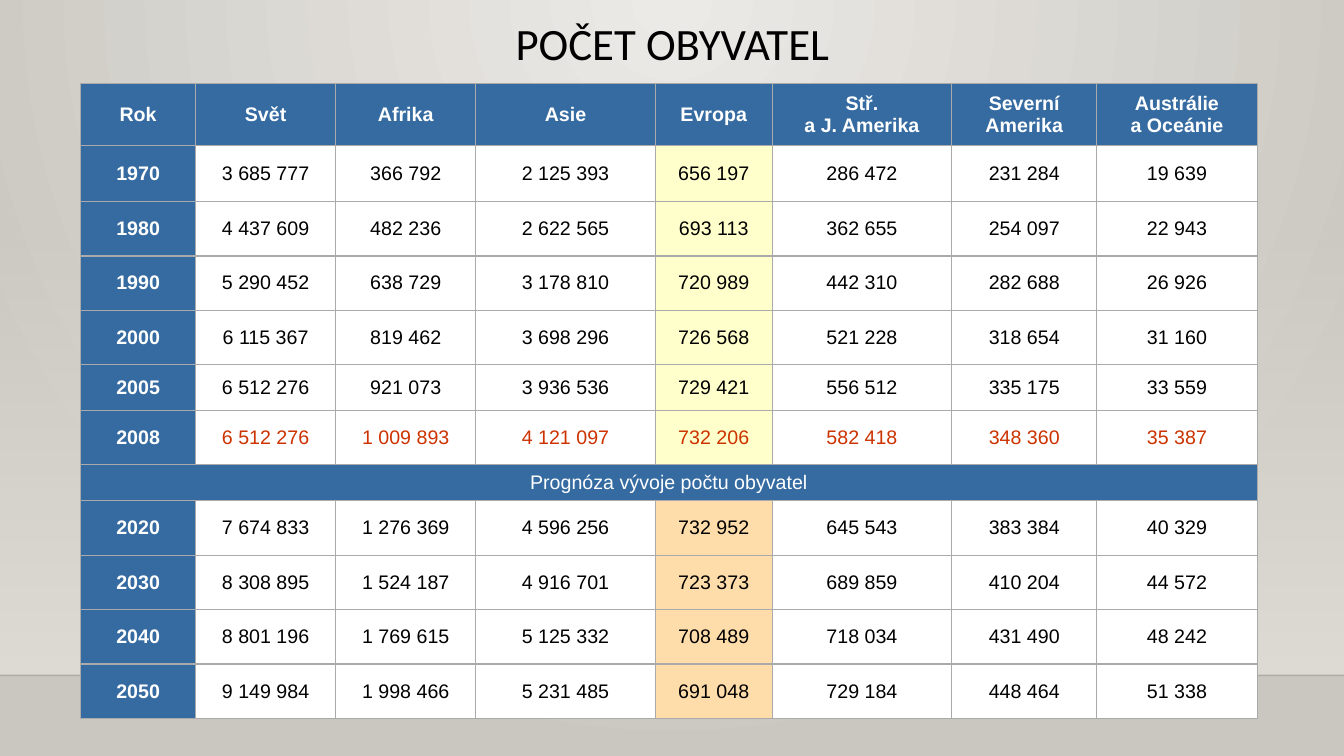
from lxml import etree
from pptx import Presentation, util as u
from pptx.dml.color import RGBColor
from pptx.enum import shapes, text
from pptx.oxml import ns

# Content
TITLE = "POČET OBYVATEL"
HEADINGS = ["Rok", "Svět", "Afrika", "Asie", "Evropa", "Stř.\na J. Amerika",
            "Severní\nAmerika", "Austrálie\na Oceánie"]
HISTORY = [
    (1970, 3685777, 366792, 2125393, 656197, 286472, 231284, 19639),
    (1980, 4437609, 482236, 2622565, 693113, 362655, 254097, 22943),
    (1990, 5290452, 638729, 3178810, 720989, 442310, 282688, 26926),
    (2000, 6115367, 819462, 3698296, 726568, 521228, 318654, 31160),
    (2005, 6512276, 921073, 3936536, 729421, 556512, 335175, 33559),
    (2008, 6512276, 1009893, 4121097, 732206, 582418, 348360, 35387),
]
FORECAST_HEADING = "Prognóza vývoje počtu obyvatel"
FORECAST = [
    (2020, 7674833, 1276369, 4596256, 732952, 645543, 383384, 40329),
    (2030, 8308895, 1524187, 4916701, 723373, 689859, 410204, 44572),
    (2040, 8801196, 1769615, 5125332, 708489, 718034, 431490, 48242),
    (2050, 9149984, 1998466, 5231485, 691048, 729184, 448464, 51338),
]
HIGHLIGHT_YEAR = 2008
EUROPE = HEADINGS.index("Evropa")

COLORS = {"blue": "356BA1", "white": "FFFFFF", "black": "000000", "red": "CC3300",
          "yellow": "FFFFCC", "orange": "FFDDAB", "border": "AAAAAA",
          "glow": "ECEAE7", "wall": "CAC7C1", "haze": "DFDBD5"}

# Layout in inches
WIDTH, HEIGHT = 13.33, 7.5
FLOOR = 6.7
HAZE_TOP = 2.21
TABLE_LEFT, TABLE_TOP = 0.8, 0.83
COLUMNS = [1.14, 1.39, 1.39, 1.78, 1.16, 1.78, 1.44, 1.59]
ROW, SPECIAL_ROWS = 0.54, {0: 0.61, 1: 0.56, 5: 0.45, 7: 0.36}


def rgb(name):
    return RGBColor.from_string(COLORS[name])


def add_node(parent, tag, **attributes):
    node = etree.SubElement(parent, ns.qn(tag))
    for key, value in attributes.items():
        node.set(key, str(value))
    return node


def set_gradient(fill, first, last):
    fill.gradient()
    for stop, name, position in zip(fill.gradient_stops, (first, last), (0, 1)):
        stop.color.rgb = rgb(name)
        stop.position = position


def style_text(frame, font_name, size, color, bold=False):
    for paragraph in frame.paragraphs:
        paragraph.alignment = text.PP_ALIGN.CENTER
        for run in paragraph.runs:
            run.font.name = font_name
            run.font.size = u.Pt(size)
            run.font.bold = bold
            run.font.color.rgb = rgb(color)


def fill_cell(cell, words, fill, color, bold=False):
    cell.text_frame.text = words
    style_text(cell.text_frame, "Arial", 14, color, bold)
    cell.vertical_anchor = text.MSO_ANCHOR.MIDDLE
    properties = cell._tc.get_or_add_tcPr()
    for side in ("a:lnL", "a:lnR", "a:lnT", "a:lnB"):
        border = add_node(properties, side, w=u.Pt(1))
        add_node(add_node(border, "a:solidFill"), "a:srgbClr", val=COLORS["border"])
    cell.fill.solid()
    cell.fill.fore_color.rgb = rgb(fill)


def add_background(slide):
    # Round glow from the top centre
    set_gradient(slide.background.fill, "glow", "wall")
    gradient = next(slide._element.iter(ns.qn("a:gradFill")))
    gradient.remove(gradient.find(ns.qn("a:lin")))
    glow = add_node(gradient, "a:path", path="circle")
    add_node(glow, "a:fillToRect", l=43000, t=0, r=43000, b=100000)

    # Haze that fades in down to the floor
    haze = slide.shapes.add_shape(shapes.MSO_SHAPE.RECTANGLE, 0, u.Inches(HAZE_TOP),
                                  u.Inches(WIDTH), u.Inches(FLOOR - HAZE_TOP))
    haze.shadow.inherit = False
    haze.line.fill.background()
    set_gradient(haze.fill, "haze", "haze")
    haze.fill.gradient_angle = 270
    add_node(next(haze._element.iter(ns.qn("a:srgbClr"))), "a:alpha", val=0)

    # Floor edge
    edge = slide.shapes.add_connector(shapes.MSO_CONNECTOR.STRAIGHT, 0, u.Inches(FLOOR),
                                      u.Inches(WIDTH), u.Inches(FLOOR))
    edge.line.width = u.Pt(1)
    edge.line.color.rgb = rgb("black")
    add_node(next(edge._element.iter(ns.qn("a:srgbClr"))), "a:alpha", val=20000)
    add_node(edge._element.spPr, "a:effectLst")


def add_population_table(slide):
    row_count = 2 + len(HISTORY) + len(FORECAST)
    rows = [SPECIAL_ROWS.get(index, ROW) for index in range(row_count)]
    table = slide.shapes.add_table(
        row_count, len(COLUMNS), u.Inches(TABLE_LEFT), u.Inches(TABLE_TOP),
        u.Inches(sum(COLUMNS)), u.Inches(sum(rows))).table
    for column, width in zip(table.columns, COLUMNS):
        column.width = u.Inches(width)
    for row, height in zip(table.rows, rows):
        row.height = u.Inches(height)

    for index, heading in enumerate(HEADINGS):
        fill_cell(table.cell(0, index), heading, "blue", "white", True)

    forecast_row = 1 + len(HISTORY)
    for start, records, europe_fill in ((1, HISTORY, "yellow"),
                                        (forecast_row + 1, FORECAST, "orange")):
        for row, (year, *counts) in enumerate(records, start):
            fill_cell(table.cell(row, 0), str(year), "blue", "white", True)
            color = "red" if year == HIGHLIGHT_YEAR else "black"
            for column, count in enumerate(counts, 1):
                fill = europe_fill if column == EUROPE else "white"
                grouped = f"{count:,}".replace(",", chr(160))
                fill_cell(table.cell(row, column), grouped, fill, color)

    band = table.cell(forecast_row, 0)
    band.merge(table.cell(forecast_row, len(COLUMNS) - 1))
    fill_cell(band, FORECAST_HEADING, "blue", "white")


def add_title(slide):
    title = slide.shapes.add_textbox(u.Inches(1.42), u.Inches(0.17),
                                     u.Inches(10.5), u.Inches(1.15)).text_frame
    title.word_wrap = True
    title.text = TITLE
    title.paragraphs[0].line_spacing = 0.9
    style_text(title, "Calibri", 32, "black")


def main():
    deck = Presentation()
    deck.slide_width, deck.slide_height = u.Inches(WIDTH), u.Inches(HEIGHT)
    slide = deck.slides.add_slide(deck.slide_layouts[6])
    add_background(slide)
    add_population_table(slide)
    add_title(slide)
    deck.save("out.pptx")


if __name__ == "__main__":
    main()
